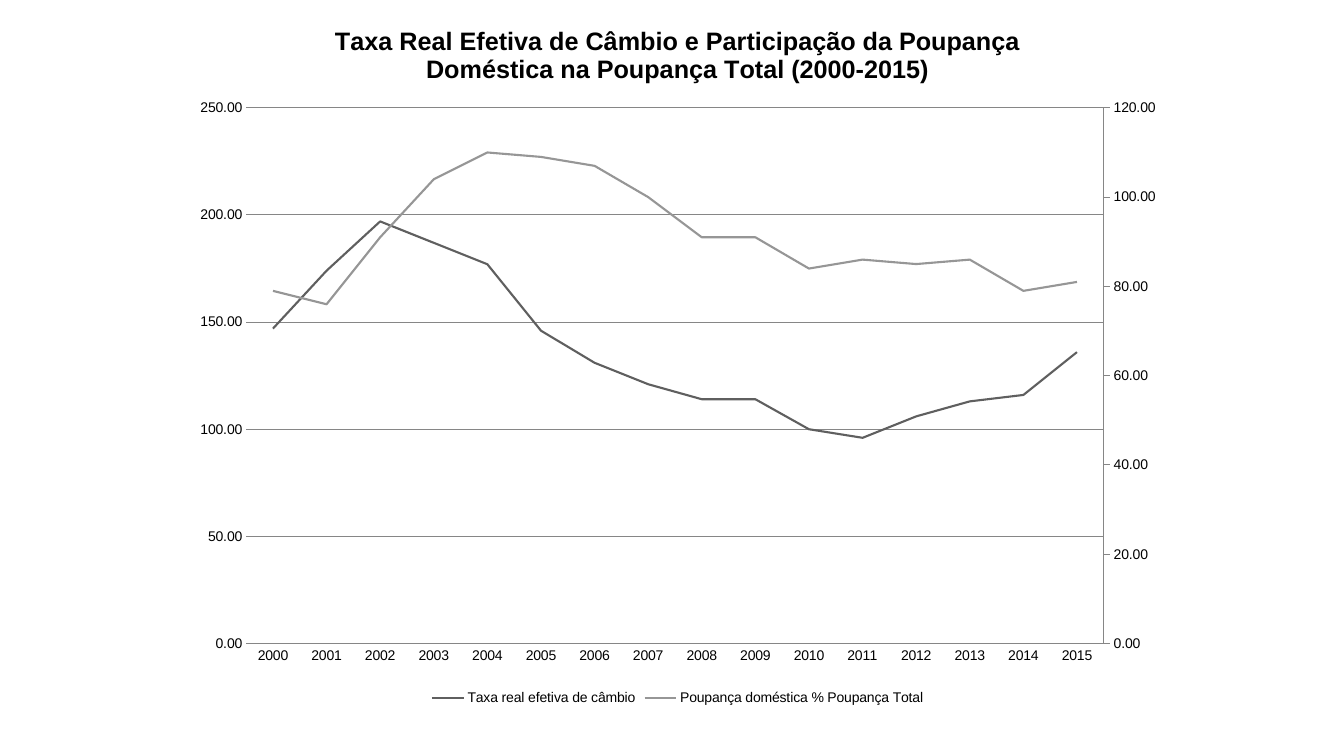
from copy import deepcopy

from lxml import etree
from pptx import Presentation
from pptx.chart.axis import CategoryAxis, ValueAxis
from pptx.chart.data import CategoryChartData
from pptx.dml.color import RGBColor
from pptx.enum.chart import XL_CHART_TYPE as ChartType
from pptx.enum.chart import XL_LEGEND_POSITION as LegendPosition
from pptx.enum.chart import XL_TICK_MARK as TickMark
from pptx.oxml.ns import qn
from pptx.util import Inches, Pt

TITLE = ("Taxa Real Efetiva de Câmbio e Participação da Poupança "
         "Doméstica na Poupança Total (2000-2015)")
YEARS = [str(year) for year in range(2000, 2016)]
SERIES = [
    ("Taxa real efetiva de câmbio", "5F5F5F",
     [147, 174, 197, 187, 177, 146, 131, 121, 114, 114, 100, 96, 106, 113, 116, 136]),
    ("Poupança doméstica % Poupança Total", "969696",
     [79, 76, 91, 104, 110, 109, 107, 100, 91, 91, 84, 86, 85, 86, 79, 81]),
]
PLOT_AREA = {"x": 0.067, "y": 0.152, "w": 0.861, "h": 0.755}


def color(value):
    return RGBColor.from_string(value)


class ChartSlide:
    font_name = "Arial"
    text_color = "000000"
    axis_color = "868686"

    def __init__(self, presentation):
        self.slide = presentation.slides.add_slide(presentation.slide_layouts[6])

    def style_font(self, font, size, bold=False):
        font.name = self.font_name
        font.size = Pt(size)
        font.bold = bold
        font.color.rgb = color(self.text_color)

    def style_line(self, line, value, width):
        line.color.rgb = color(value)
        line.width = Pt(width)

    def add_line_chart(self, left, top, width, height, categories, series_list):
        data = CategoryChartData(number_format="0")
        data.categories = categories
        for name, _, values in series_list:
            data.add_series(name, values)
        frame = self.slide.shapes.add_chart(
            ChartType.LINE, Inches(left), Inches(top), Inches(width), Inches(height), data)
        chart = frame.chart
        self.style_font(chart.font, 10)
        chart.plots[0].vary_by_categories = False
        for series, (_, value, _) in zip(chart.plots[0].series, series_list):
            series.smooth = False
            self.style_line(series.format.line, value, 1.5)
        return chart

    def add_title(self, chart, text):
        chart.has_title = True
        chart.chart_title.include_in_layout = False
        paragraph = chart.chart_title.text_frame.paragraphs[0]
        paragraph.text = text
        self.style_font(paragraph.runs[0].font, 18, bold=True)

    def add_legend(self, chart):
        chart.has_legend = True
        chart.legend.position = LegendPosition.BOTTOM
        chart.legend.include_in_layout = False
        self.style_font(chart.legend.font, 10)

    def style_category_axis(self, axis):
        axis.major_tick_mark = axis.minor_tick_mark = TickMark.NONE
        self.style_font(axis.tick_labels.font, 10)
        self.style_line(axis.format.line, self.axis_color, 0.75)

    def style_value_axis(self, axis, maximum, step):
        axis.minimum_scale = 0
        axis.maximum_scale = maximum
        axis.major_unit = step
        axis.major_tick_mark = axis.minor_tick_mark = TickMark.NONE
        axis.tick_labels.number_format = "0.00"
        axis.tick_labels.number_format_is_linked = False
        self.style_font(axis.tick_labels.font, 10)
        axis.has_major_gridlines = True
        self.style_line(axis.major_gridlines.format.line, self.axis_color, 0.75)
        axis.format.line.fill.background()

    def add_right_axis(self, chart, maximum, step):
        left_plot = chart.plots[0]._element
        right_plot = deepcopy(left_plot)
        left_plot.remove(left_plot.findall(qn("c:ser"))[1])
        right_plot.remove(right_plot.find(qn("c:ser")))
        left_plot.addnext(right_plot)

        value_element = deepcopy(chart.value_axis._element)
        category_element = deepcopy(chart.category_axis._element)
        chart.value_axis._element.addnext(value_element)
        value_element.addnext(category_element)
        category_id, value_id = "1001", "1002"
        for element, own_id, cross_id in ((category_element, category_id, value_id),
                                          (value_element, value_id, category_id)):
            element.find(qn("c:axId")).set("val", own_id)
            element.find(qn("c:crossAx")).set("val", cross_id)
        for element, axis_id in zip(right_plot.findall(qn("c:axId")), (category_id, value_id)):
            element.set("val", axis_id)
        value_element.find(qn("c:axPos")).set("val", "r")
        value_element.find(qn("c:crosses")).set("val", "max")

        CategoryAxis(category_element).visible = False
        axis = ValueAxis(value_element)
        self.style_value_axis(axis, maximum, step)
        axis.has_major_gridlines = False
        axis.major_tick_mark = TickMark.OUTSIDE
        self.style_line(axis.format.line, self.axis_color, 0.75)

    def place_plot_area(self, chart, bounds):
        plot_area = chart.plots[0]._element.getparent()
        for layout in plot_area.findall(qn("c:layout")):
            plot_area.remove(layout)
        layout = etree.Element(qn("c:layout"))
        manual = etree.SubElement(layout, qn("c:manualLayout"))
        settings = {"layoutTarget": "inner", "xMode": "edge", "yMode": "edge", **bounds}
        for name, value in settings.items():
            etree.SubElement(manual, qn(f"c:{name}")).set("val", str(value))
        plot_area.insert(0, layout)


def main():
    presentation = Presentation()
    presentation.slide_width = Inches(13.33)
    presentation.slide_height = Inches(7.5)

    page = ChartSlide(presentation)
    chart = page.add_line_chart(1.78, 0, 9.88, 7.04, YEARS, SERIES)
    page.add_title(chart, TITLE)
    page.add_legend(chart)
    page.style_category_axis(chart.category_axis)
    page.style_value_axis(chart.value_axis, maximum=250, step=50)
    page.add_right_axis(chart, maximum=120, step=20)
    page.place_plot_area(chart, PLOT_AREA)

    presentation.save("out.pptx")


if __name__ == "__main__":
    main()
